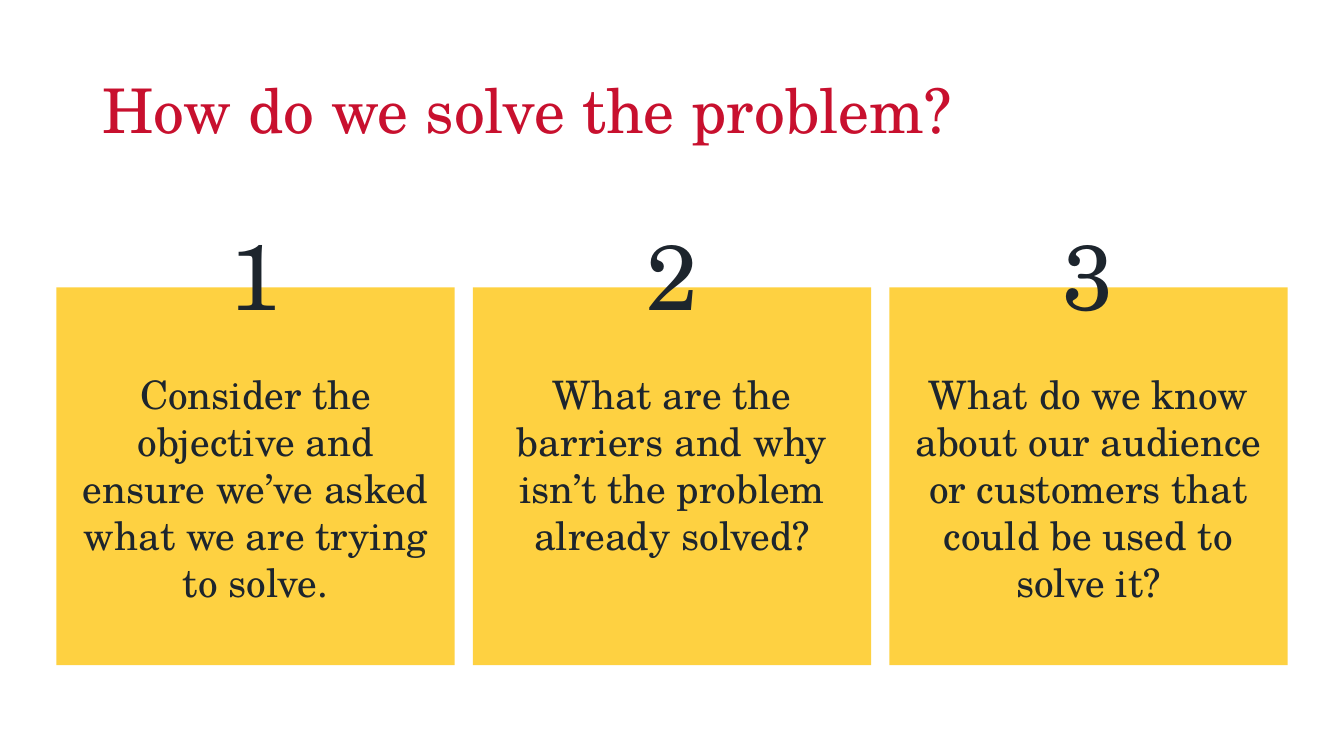
from dataclasses import dataclass

from pptx import Presentation
from pptx.dml.color import RGBColor
from pptx.enum.shapes import MSO_SHAPE
from pptx.enum.text import MSO_ANCHOR, PP_ALIGN
from pptx.util import Inches, Pt

RECT = MSO_SHAPE.RECTANGLE
TOP, MIDDLE = MSO_ANCHOR.TOP, MSO_ANCHOR.MIDDLE
LEFT, CENTER = PP_ALIGN.LEFT, PP_ALIGN.CENTER


@dataclass(frozen=True)
class Theme:
    font: str = "TeX Gyre Schola"
    red: str = "C8102E"
    gold: str = "FED141"
    ink: str = "1D252D"
    title: int = 44
    number: int = 66
    body: int = 28


THEME = Theme()
WIDTH, HEIGHT = 13.33, 7.5

# Card grid, in inches
START, PITCH = 0.56, 4.13
CARD_TOP, CARD_WIDTH, CARD_HEIGHT = 2.85, 3.95, 3.75
INSET = 0.11

STEPS = [
    "Consider the objective and ensure we’ve asked what we are trying to solve.",
    "What are the barriers and why isn’t the problem already solved?",
    "What do we know about our audience or customers that could be used to solve it?",
]


def add_text(slide, text, box, *, size, color=THEME.ink, align=CENTER,
             anchor=TOP, spacing=1.0, before=0):
    frame = slide.shapes.add_textbox(*map(Inches, box)).text_frame
    frame.word_wrap = True
    frame.vertical_anchor = anchor
    para = frame.paragraphs[0]
    para.alignment = align
    para.line_spacing = spacing
    para.space_before = Pt(before)
    run = para.add_run()
    run.text = text
    run.font.name = THEME.font
    run.font.size = Pt(size)
    run.font.color.rgb = RGBColor.from_string(color)


def add_panel(slide, box):
    panel = slide.shapes.add_shape(RECT, *map(Inches, box))
    panel.shadow.inherit = False
    panel.fill.solid()
    panel.fill.fore_color.rgb = RGBColor.from_string(THEME.gold)
    panel.line.fill.background()


def add_step(slide, index, text):
    """Draw one card with its number straddling the top edge."""
    left = START + index * PITCH
    inner, width = left + INSET, CARD_WIDTH - 2 * INSET
    add_panel(slide, (left, CARD_TOP, CARD_WIDTH, CARD_HEIGHT))
    add_text(slide, text, (inner, 3.62, width, 2.88),
             size=THEME.body, before=10)
    add_text(slide, str(index + 1), (inner, 2.24, width, 0.8),
             size=THEME.number, spacing=0.9, before=10)


def main():
    deck = Presentation()
    deck.slide_width, deck.slide_height = Inches(WIDTH), Inches(HEIGHT)
    slide = deck.slides.add_slide(deck.slide_layouts[6])
    add_text(slide, "How do we solve the problem?", (0.92, 0.4, 11.5, 1.45),
             size=THEME.title, color=THEME.red, align=LEFT,
             anchor=MIDDLE, spacing=0.9)
    for index, text in enumerate(STEPS):
        add_step(slide, index, text)
    deck.save("out.pptx")


if __name__ == "__main__":
    main()
